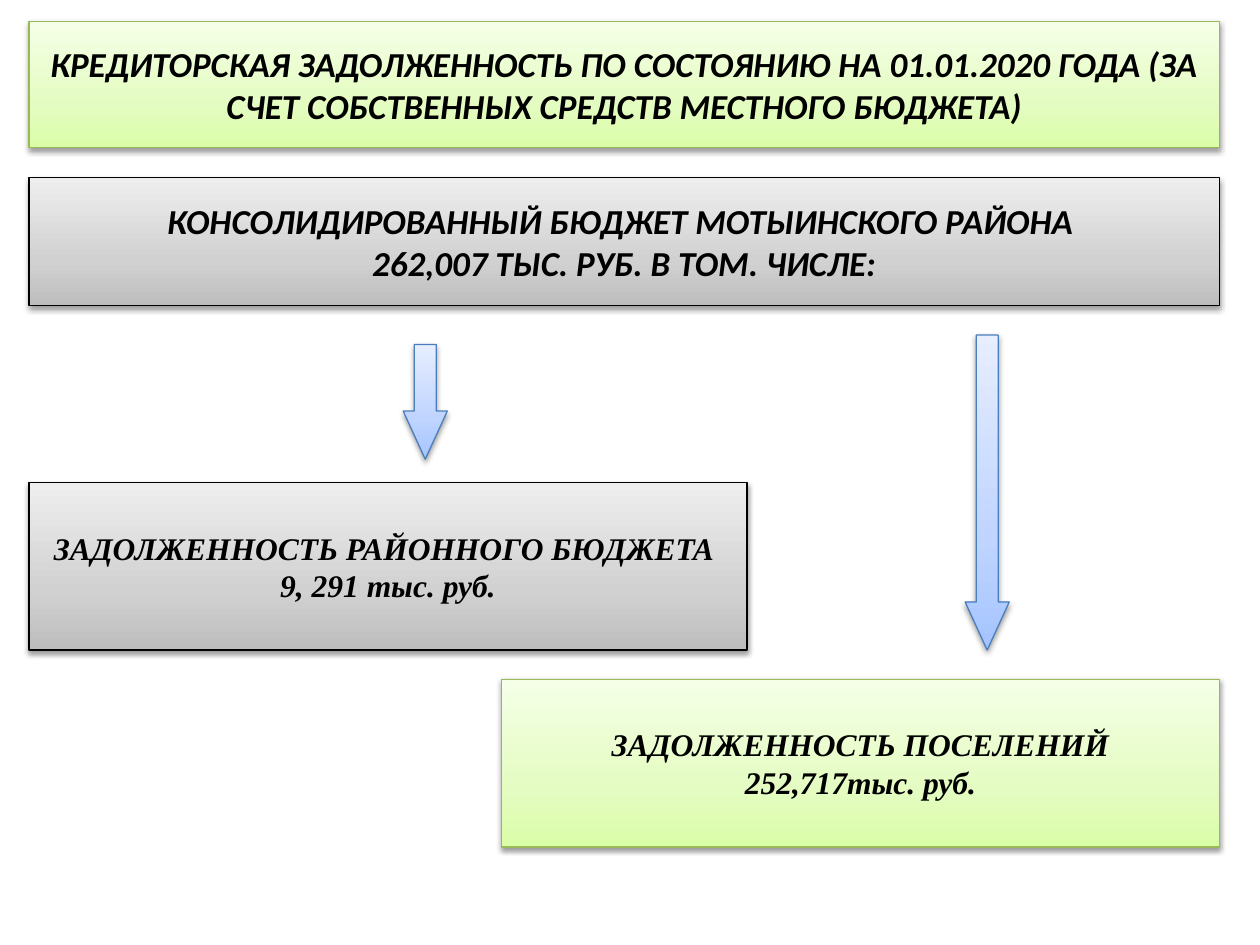
import copy

import lxml.etree
import pptx
import pptx.dml.color
import pptx.enum.shapes
import pptx.enum.text
import pptx.oxml
import pptx.oxml.ns
import pptx.util

Pt = pptx.util.Pt
RGBColor = pptx.dml.color.RGBColor
SHAPES = pptx.enum.shapes.MSO_SHAPE
qn = pptx.oxml.ns.qn

BLACK = RGBColor(0x00, 0x00, 0x00)
GREEN = {
    "line": RGBColor(0x98, 0xB9, 0x55),
    "stops": [RGBColor(0xDA, 0xFD, 0xA7), RGBColor(0xE4, 0xFC, 0xC2), RGBColor(0xF5, 0xFF, 0xE7)],
}
GREY = {
    "line": BLACK,
    "stops": [RGBColor(0xBD, 0xBD, 0xBD), RGBColor(0xD1, 0xD1, 0xD1), RGBColor(0xEE, 0xEE, 0xEE)],
}
BLUE = {
    "line": RGBColor(0x4B, 0x7E, 0xBC),
    "stops": [RGBColor(0xA4, 0xC4, 0xFF), RGBColor(0xBF, 0xD4, 0xFF), RGBColor(0xE6, 0xEE, 0xFF)],
}
STOP_POSITIONS = (0, 0.35, 1)

HEADING_FONT = {"name": "Calibri", "size": Pt(20), "bold": True, "italic": True}
DEBT_FONT = {"name": "Times New Roman", "size": Pt(18), "bold": True, "italic": True}

LEFT, RIGHT = 16.56, 696.96
FULL_WIDTH = RIGHT - LEFT
DEBT_WIDTH, DEBT_HEIGHT = 410.4, 95.76
ARROW_WIDTH = 25.2

TITLE = ["КРЕДИТОРСКАЯ ЗАДОЛЖЕННОСТЬ ПО СОСТОЯНИЮ НА 01.01.2020 ГОДА "
         "(ЗА СЧЕТ СОБСТВЕННЫХ СРЕДСТВ МЕСТНОГО БЮДЖЕТА)"]
TITLE_BOX = (LEFT, 12.24, FULL_WIDTH, 72)
BOXES = [
    (SHAPES.FOLDED_CORNER, (LEFT, 101.5, FULL_WIDTH, 73.2), GREY, HEADING_FONT,
     ["КОНСОЛИДИРОВАННЫЙ БЮДЖЕТ МОТЫИНСКОГО РАЙОНА ", "262,007 ТЫС. РУБ. В ТОМ. ЧИСЛЕ:"]),
    (SHAPES.RECTANGLE, (LEFT, 275.76, DEBT_WIDTH, DEBT_HEIGHT), GREY, DEBT_FONT,
     ["ЗАДОЛЖЕННОСТЬ РАЙОННОГО БЮДЖЕТА ", "9, 291 тыс. руб."]),
    (SHAPES.RECTANGLE, (RIGHT - DEBT_WIDTH, 388.3, DEBT_WIDTH, DEBT_HEIGHT), GREEN, DEBT_FONT,
     ["ЗАДОЛЖЕННОСТЬ ПОСЕЛЕНИЙ", "252,717тыс. руб."]),
]
ARROWS = [(551.5, 191.5, ARROW_WIDTH, 180), (230.4, 196.9, ARROW_WIDTH, 65.5)]

SHADOW = (
    f'<a:outerShdw {pptx.oxml.ns.nsdecls("a")} blurRad="{Pt(3.15)}" dist="{Pt(1.57)}" '
    'dir="5400000" rotWithShape="0"><a:srgbClr val="000000"><a:alpha val="38000"/>'
    '</a:srgbClr></a:outerShdw>'
)


def place(shape, box):
    for name, value in zip(("left", "top", "width", "height"), box):
        setattr(shape, name, Pt(value))


def flatten_corner(shape):
    guides = shape._element.spPr.find(".//" + qn("a:avLst"))
    lxml.etree.SubElement(guides, qn("a:gd"), name="adj", fmla="val 0")


def paint(shape, palette):
    properties = shape._element.spPr
    shape.fill.gradient()
    shape.fill.gradient_angle = 90
    stop_list = properties.find(".//" + qn("a:gsLst"))
    stop_list.insert(1, copy.deepcopy(stop_list[0]))
    for stop, color, position in zip(shape.fill.gradient_stops, palette["stops"], STOP_POSITIONS):
        stop.color.rgb = color
        stop.position = position
    shape.line.color.rgb = palette["line"]
    shape.line.width = Pt(0.75)
    shape.shadow.inherit = False
    effects = properties.find(qn("a:effectLst"))
    effects.append(pptx.oxml.parse_xml(SHADOW))


def write(shape, lines, font_format):
    frame = shape.text_frame
    frame.text = "\n".join(lines)
    frame.word_wrap = True
    frame.auto_size = pptx.enum.text.MSO_AUTO_SIZE.NONE
    frame.vertical_anchor = pptx.enum.text.MSO_ANCHOR.MIDDLE
    for paragraph in frame.paragraphs:
        paragraph.alignment = pptx.enum.text.PP_ALIGN.CENTER
        font = paragraph.runs[0].font
        font.color.rgb = BLACK
        for name, value in font_format.items():
            setattr(font, name, value)


def main():
    presentation = pptx.Presentation()
    presentation.slide_width, presentation.slide_height = Pt(720), Pt(540)
    slide = presentation.slides.add_slide(presentation.slide_layouts[5])

    title = slide.shapes.title
    place(title, TITLE_BOX)
    paint(title, GREEN)
    write(title, TITLE, HEADING_FONT)

    for kind, box, palette, font_format, lines in BOXES:
        shape = slide.shapes.add_shape(kind, *map(Pt, box))
        if kind == SHAPES.FOLDED_CORNER:
            flatten_corner(shape)
        paint(shape, palette)
        write(shape, lines, font_format)

    for box in ARROWS:
        arrow = slide.shapes.add_shape(SHAPES.DOWN_ARROW, *map(Pt, box))
        arrow.adjustments[1] = 1.09
        paint(arrow, BLUE)

    presentation.save("out.pptx")


if __name__ == "__main__":
    main()
